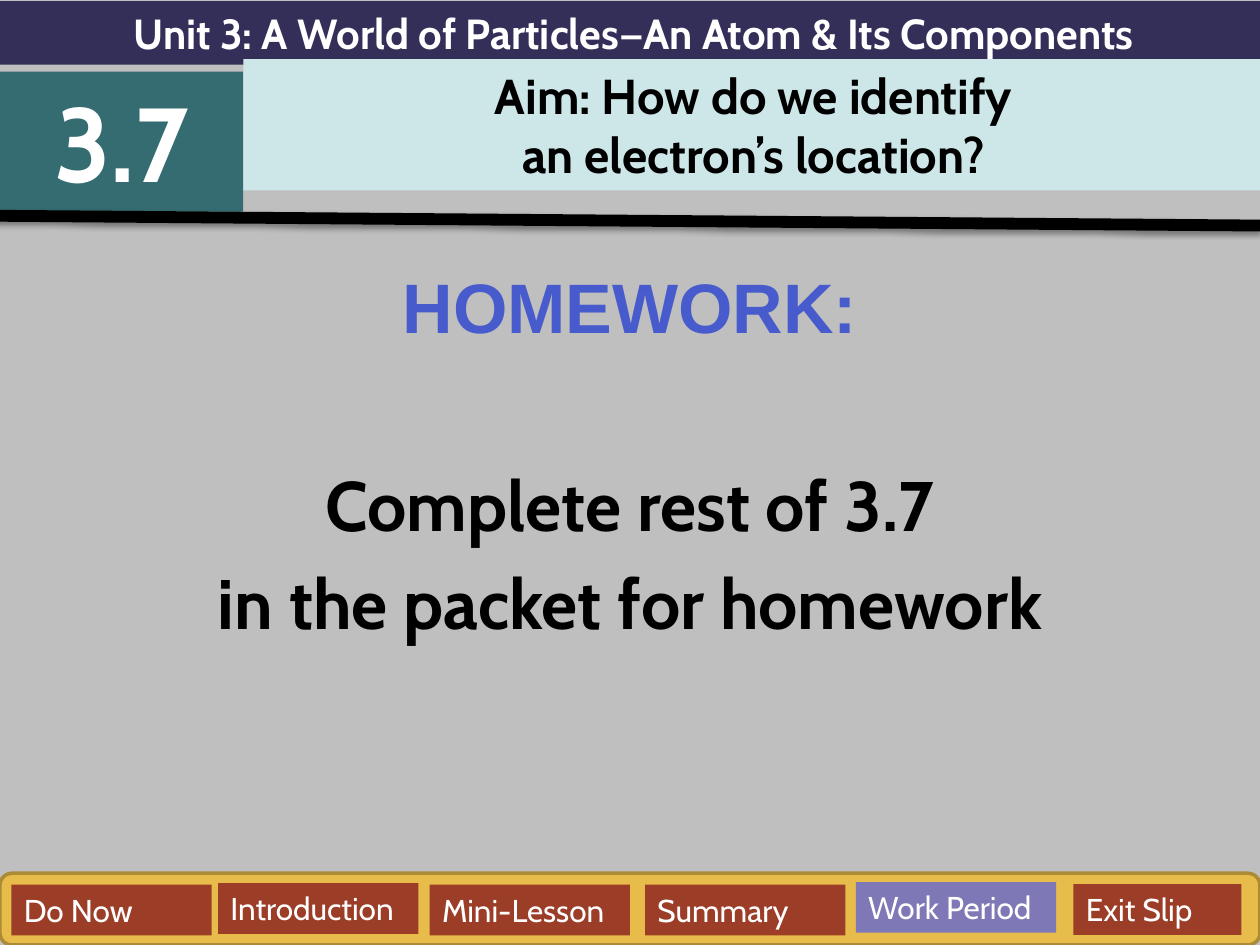
"""Build the homework slide of lesson 3.7 with its banner, aim and lesson navigation bar."""
from lxml import etree
from pptx import Presentation
from pptx.dml.color import RGBColor
from pptx.enum import shapes, text
from pptx.oxml import ns
from pptx.util import Pt

GREY = RGBColor(0xBF, 0xBF, 0xBF)
NAVY = RGBColor(0x34, 0x2F, 0x59)
TEAL = RGBColor(0x34, 0x6C, 0x71)
PALE = RGBColor(0xCD, 0xE6, 0xE8)
GOLD = RGBColor(0xE8, 0xBC, 0x4A)
OCHRE = RGBColor(0xAC, 0x8B, 0x37)
RUST = RGBColor(0x9C, 0x3D, 0x28)
VIOLET = RGBColor(0x7E, 0x78, 0xB7)
BLUE = RGBColor(0x47, 0x5B, 0xCD)
WHITE = RGBColor(255, 255, 255)
BLACK = RGBColor(0, 0, 0)

UNIT = "Unit 3: A World of Particles—An Atom & Its Components"
LESSON = "3.7"
AIM = ["Aim: How do we identify", "an electron’s location?"]
HOMEWORK = [
    ("HOMEWORK:", "Arial", BLUE, 0),
    ("Complete rest of 3.7", "Cabin", BLACK, 65),
    ("in the packet for homework", "Cabin", BLACK, 8),
]
BUTTONS = [
    ("Do Now", 6.5, 505.5, 114.5, RUST),
    ("Introduction", 124.6, 504.7, 114.5, RUST),
    ("Mini-Lesson", 245.5, 505.5, 114.5, RUST),
    ("Summary", 368.6, 505.5, 114.5, RUST),
    ("Work Period", 489, 504, 114.5, VIOLET),
    ("Exit Slip", 613.4, 505.2, 96, RUST),
]
BUTTON_HEIGHT = 29
CENTER, LEFT = text.PP_ALIGN.CENTER, text.PP_ALIGN.LEFT
RECT, ROUND = shapes.MSO_SHAPE.RECTANGLE, shapes.MSO_SHAPE.ROUNDED_RECTANGLE


def assign(obj, values):
    for name, value in values.items():
        setattr(obj, name, value)


def place(sp, left, top, width, height):
    assign(sp, dict(left=Pt(left), top=Pt(top), width=Pt(width), height=Pt(height)))


def paint(sp, color):
    sp.fill.solid()
    sp.fill.fore_color.rgb = color


def add_box(s, kind, box, color):
    sp = s.shapes.add_shape(kind, *map(Pt, box))
    sp.shadow.inherit = False
    paint(sp, color)
    sp.line.fill.background()
    return sp


def write(sp, lines, align=CENTER):
    tf = sp.text_frame
    assign(tf, dict(word_wrap=True, auto_size=text.MSO_AUTO_SIZE.NONE,
                    vertical_anchor=text.MSO_ANCHOR.TOP))
    for i, (words, font, size, color, bold, before) in enumerate(lines):
        p = tf.add_paragraph() if i else tf.paragraphs[0]
        assign(p, dict(alignment=align, space_before=Pt(before)))
        r = p.add_run()
        r.text = words
        assign(r.font, dict(name=font, size=Pt(size), bold=bold))
        r.font.color.rgb = color


def add_rule(s):
    line = s.shapes.add_connector(
        shapes.MSO_CONNECTOR.STRAIGHT, Pt(-3.6), Pt(123.3), Pt(720), Pt(128.9))
    line.line.width = Pt(6.75)
    line.line.color.rgb = BLACK
    effects = etree.SubElement(line._element.spPr, ns.qn("a:effectLst"))
    shadow = etree.SubElement(
        effects, ns.qn("a:outerShdw"), blurRad=str(Pt(3.1)), dist=str(Pt(1.6)),
        dir="5400000", rotWithShape="0")
    color = etree.SubElement(shadow, ns.qn("a:srgbClr"), val=str(BLACK))
    etree.SubElement(color, ns.qn("a:alpha"), val="38000")


def main():
    prs = Presentation()
    assign(prs, dict(slide_width=Pt(720), slide_height=Pt(540)))
    s = prs.slides.add_slide(prs.slide_layouts[0])
    s.background.fill.solid()
    s.background.fill.fore_color.rgb = GREY
    title, body = s.placeholders

    place(body, 0, 147, 720, 393)
    write(body, [(words, font, 40, color, True, before)
                 for words, font, color, before in HOMEWORK])

    banner = add_box(s, RECT, (0, 0.7, 724, 36.3), NAVY)
    write(banner, [(UNIT, "Cabin", 24, WHITE, True, 0)])
    number = add_box(s, RECT, (0, 41, 139, 80), TEAL)
    write(number, [(LESSON, "Cabin", 60, WHITE, True, 0)])

    place(title, 139, 33.8, 583, 75)
    paint(title, PALE)
    write(title, [(words, "Cabin", 28, BLACK, True, 0) for words in AIM])
    s.shapes._spTree.append(title._element)

    add_rule(s)
    bar = add_box(s, ROUND, (0, 499, 720, 41), GOLD)
    bar.line.color.rgb = OCHRE
    bar.line.width = Pt(2)
    for label, left, top, width, color in BUTTONS:
        button = add_box(s, RECT, (left, top, width, BUTTON_HEIGHT), color)
        write(button, [(label, "Cabin", 18, WHITE, False, 0)], LEFT)

    prs.save("out.pptx")


if __name__ == "__main__":
    main()
